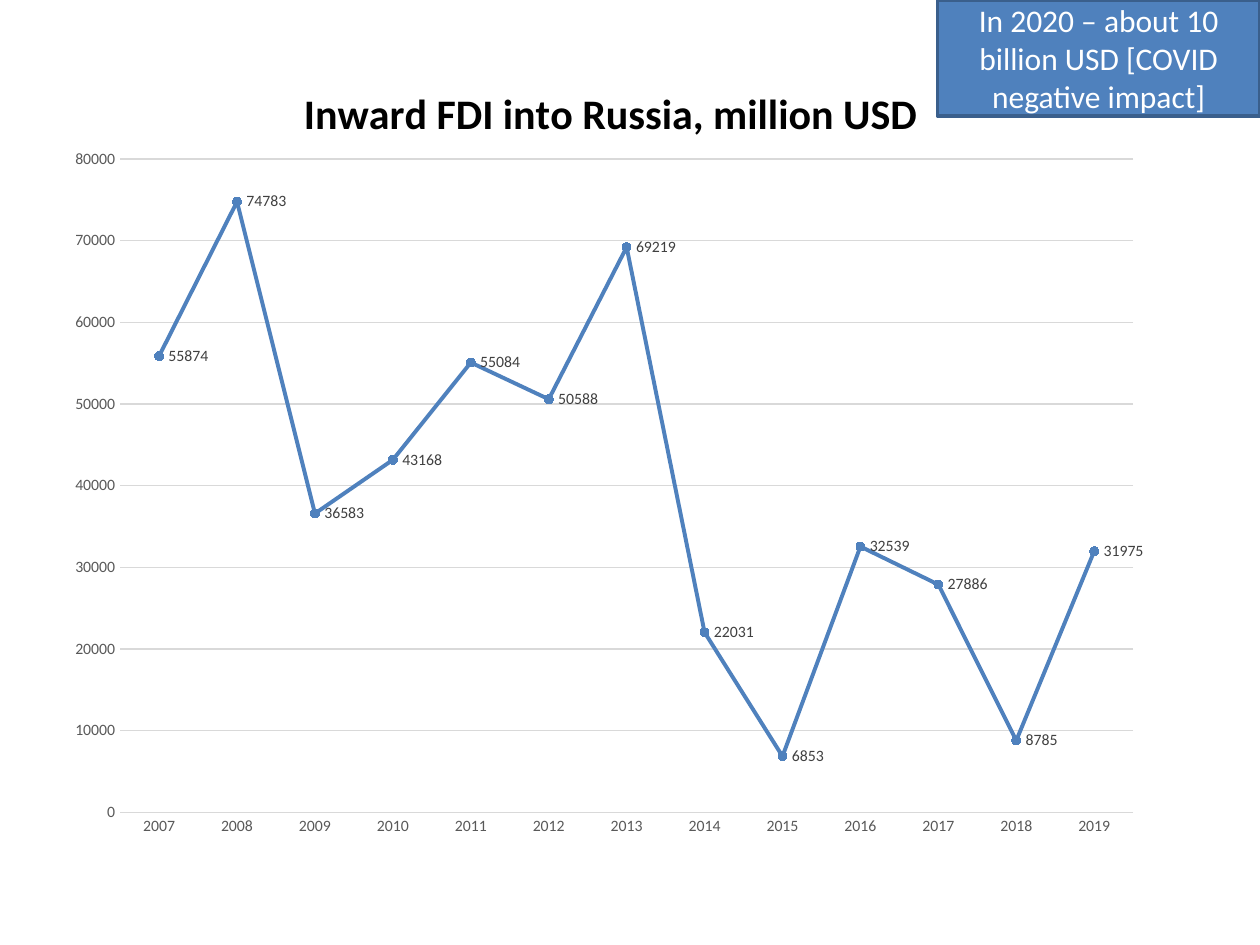
from lxml.etree import SubElement
from pptx import Presentation
from pptx.chart.data import CategoryChartData
from pptx.dml.color import RGBColor
from pptx.enum.chart import XL_CHART_TYPE as Chart, XL_LABEL_POSITION as LabelPos
from pptx.enum.chart import XL_MARKER_STYLE as Marker, XL_TICK_MARK as Tick
from pptx.enum.shapes import MSO_SHAPE as Shape
from pptx.enum.text import MSO_ANCHOR as Anchor, PP_ALIGN as Align
from pptx.oxml.ns import qn
from pptx.util import Cm, Pt

# Content
TITLE = "Inward FDI into Russia, million USD"
NOTE = "In 2020 – about 10 billion USD [COVID negative impact]"
FIRST_YEAR = 2007
INFLOWS = [55874, 74783, 36583, 43168, 55084, 50588, 69219,
           22031, 6853, 32539, 27886, 8785, 31975]

THEME = {
    "font": "Calibri",
    "blue": RGBColor(0x4F, 0x81, 0xBD),
    "border": RGBColor(0x3A, 0x5F, 0x8C),
    "grid": RGBColor(0xD9, 0xD9, 0xD9),
    "axis": RGBColor(0x59, 0x59, 0x59),
    "label": RGBColor(0x40, 0x40, 0x40),
    "black": RGBColor(0, 0, 0),
    "white": RGBColor(255, 255, 255),
    "title_size": Pt(24),
    "note_size": Pt(18),
    "chart_size": Pt(10),
    "small_size": Pt(9),
}


def style_font(font, size, color, bold=False):
    font.name = THEME["font"]
    font.size = THEME[size]
    font.color.rgb = THEME[color]
    font.bold = bold


def style_line(line, color, width):
    line.color.rgb = THEME[color]
    line.width = Pt(width)


def place(parent, index, **values):
    """Give a chart part a manual layout, as fractions of the chart."""
    for old in parent.findall(qn("c:layout")):
        parent.remove(old)
    layout = SubElement(parent, qn("c:layout"))
    parent.insert(index, layout)
    manual = SubElement(layout, qn("c:manualLayout"))
    for tag, value in values.items():
        SubElement(manual, qn(f"c:{tag}")).set("val", str(value))


def add_fdi_chart(slide):
    data = CategoryChartData(number_format="0")
    data.categories = [str(FIRST_YEAR + i) for i in range(len(INFLOWS))]
    data.add_series("Series 1", INFLOWS)
    chart = slide.shapes.add_chart(Chart.LINE_MARKERS, Cm(1.09), Cm(0.74),
                                   Cm(22.2), Cm(16.46), data).chart
    chart.has_legend = False
    style_font(chart.font, "chart_size", "black")

    # Title
    tf = chart.chart_title.text_frame
    tf.text = TITLE
    style_font(tf.paragraphs[0].font, "title_size", "black", bold=True)
    title = chart.chart_title._element
    place(title, 1, xMode="edge", yMode="edge", x=0.22, y=0.05)

    # Plot area and axes
    plot = chart.plots[0]
    plot.vary_by_categories = False
    place(plot._element.getparent(), 0, layoutTarget="inner", xMode="edge",
          yMode="edge", x=0.06, y=0.15, w=0.92, h=0.8)
    years, amounts = chart.category_axis, chart.value_axis
    for axis in (years, amounts):
        axis.major_tick_mark = axis.minor_tick_mark = Tick.NONE
        style_font(axis.tick_labels.font, "small_size", "axis")
    style_line(years.format.line, "grid", 0.75)
    amounts.format.line.fill.background()
    amounts.minimum_scale, amounts.maximum_scale = 0, 80000
    amounts.major_unit = 10000
    amounts.has_major_gridlines = True
    style_line(amounts.major_gridlines.format.line, "grid", 0.75)
    amounts.tick_labels.number_format = "0"
    amounts.tick_labels.number_format_is_linked = False

    # Series, markers and labels
    series = plot.series[0]
    series.smooth = False
    style_line(series.format.line, "blue", 2.25)
    marker = series.marker
    marker.style, marker.size = Marker.CIRCLE, 5
    marker.format.fill.solid()
    marker.format.fill.fore_color.rgb = THEME["blue"]
    style_line(marker.format.line, "blue", 0.75)
    labels = series.data_labels
    labels.show_value = True
    labels.position = LabelPos.RIGHT
    labels.number_format, labels.number_format_is_linked = "0", False
    style_font(labels.font, "small_size", "label")


def add_note(slide):
    width = Cm(6.5)
    sp = slide.shapes.add_shape(Shape.RECTANGLE, prs.slide_width - width, 0,
                                width, Cm(2.34))
    sp.shadow.inherit = False
    sp.fill.solid()
    sp.fill.fore_color.rgb = THEME["blue"]
    style_line(sp.line, "border", 2)
    tf = sp.text_frame
    tf.word_wrap = True
    tf.vertical_anchor = Anchor.MIDDLE
    p = tf.paragraphs[0]
    p.text = NOTE
    p.alignment = Align.CENTER
    style_font(p.font, "note_size", "white")


prs = Presentation()
prs.slide_width, prs.slide_height = Cm(25.4), Cm(19.05)
slide = prs.slides.add_slide(prs.slide_layouts[6])
add_fdi_chart(slide)
add_note(slide)
prs.save("out.pptx")
